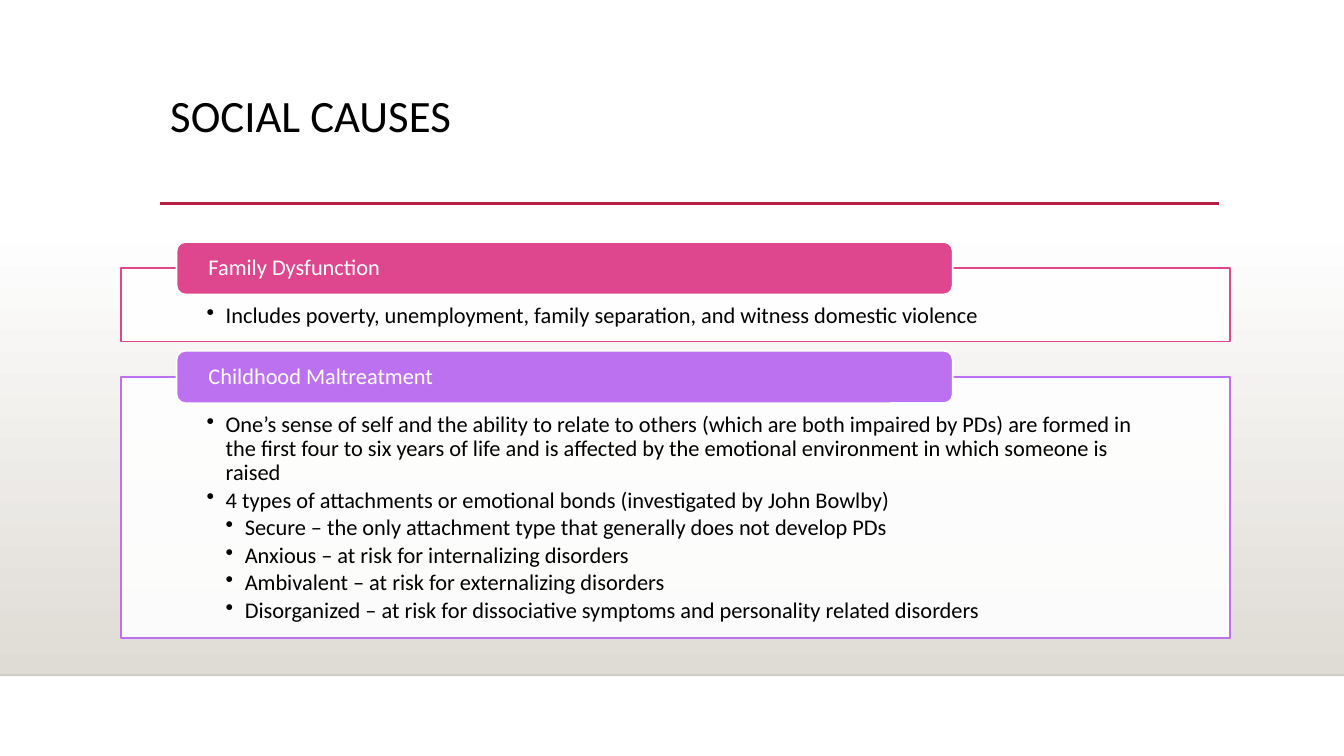
from lxml.etree import SubElement
from pptx import Presentation
from pptx.dml.color import RGBColor
from pptx.enum.shapes import MSO_CONNECTOR, MSO_SHAPE
from pptx.enum.text import MSO_ANCHOR, PP_ALIGN
from pptx.oxml.ns import qn
from pptx.util import Cm, Pt

BLACK = RGBColor(0, 0, 0)
WHITE = RGBColor(0xFF, 0xFF, 0xFF)
CRIMSON = RGBColor(0xB7, 0x1E, 0x42)
PINK = RGBColor(0xDE, 0x47, 0x8E)
PURPLE = RGBColor(0xBC, 0x72, 0xF0)
STONE = RGBColor(0xDF, 0xDB, 0xD5)

SLIDE_WIDTH, SLIDE_HEIGHT = 33.87, 19.05
FLOOR_TOP, FLOOR_BOTTOM = 5.61, 17.02
PANEL_LEFT, PANEL_WIDTH, PANEL_GAP = 3.05, 27.94, 0.89
HEADER_LEFT, HEADER_WIDTH, HEADER_HEIGHT = 4.45, 19.56, 1.32
BULLET_INDENT = 0.48

# Heading, colour, panel height, and (level, text) items
PANELS = [
    ("Family Dysfunction", PINK, 1.85, [
        (1, "Includes poverty, unemployment, family separation, and witness domestic violence"),
    ]),
    ("Childhood Maltreatment", PURPLE, 6.58, [
        (1, "One’s sense of self and the ability to relate to others (which are both impaired "
            "by PDs) are formed in the first four to six years of life and is affected by the "
            "emotional environment in which someone is raised"),
        (1, "4 types of attachments or emotional bonds (investigated by John Bowlby)"),
        (2, "Secure – the only attachment type that generally does not develop PDs"),
        (2, "Anxious – at risk for internalizing disorders"),
        (2, "Ambivalent – at risk for externalizing disorders"),
        (2, "Disorganized – at risk for dissociative symptoms and personality related disorders"),
    ]),
]


def set_alpha(color_parent, percent):
    """Make the solid colour inside an element partly transparent."""
    color = color_parent.find(".//" + qn("a:srgbClr"))
    SubElement(color, qn("a:alpha"), val=str(percent * 1000))


def write_text(paragraph, text, *, size=16, color=BLACK, level=0, space_after=0):
    """Fill a paragraph; a level above zero makes it a bullet."""
    if level:
        properties = paragraph._p.get_or_add_pPr()
        properties.set("marL", str(Cm(BULLET_INDENT * level)))
        properties.set("indent", str(-Cm(BULLET_INDENT)))
        SubElement(properties, qn("a:buChar"), char="•")
    paragraph.alignment = PP_ALIGN.LEFT
    paragraph.line_spacing = 0.9
    paragraph.space_after = Pt(space_after)
    run = paragraph.add_run()
    run.text = text
    run.font.name = "Calibri"
    run.font.size = Pt(size)
    run.font.color.rgb = color


class SlideBuilder:
    def __init__(self, slide):
        self.slide = slide

    def frame(self, shape, anchor, margins):
        frame = shape.text_frame
        frame.word_wrap = True
        frame.vertical_anchor = anchor
        (frame.margin_left, frame.margin_top,
         frame.margin_right, frame.margin_bottom) = map(Cm, margins)
        return frame

    def box(self, kind, left, top, width, height, line_color=None):
        shape = self.slide.shapes.add_shape(kind, Cm(left), Cm(top), Cm(width), Cm(height))
        shape.shadow.inherit = False
        if line_color is None:
            shape.line.fill.background()
        else:
            shape.line.color.rgb = line_color
            shape.line.width = Pt(1.25)
        return shape

    def floor(self):
        shape = self.box(MSO_SHAPE.RECTANGLE, 0, FLOOR_TOP, SLIDE_WIDTH, FLOOR_BOTTOM - FLOOR_TOP)
        shape.fill.gradient()
        shape.fill.gradient_angle = 270
        for stop, position, color in zip(shape.fill.gradient_stops, (0, 1), (WHITE, STONE)):
            stop.position = position
            stop.color.rgb = color

    def rule(self, left, right, y, color, width, alpha=100):
        line = self.slide.shapes.add_connector(
            MSO_CONNECTOR.STRAIGHT, Cm(left), Cm(y), Cm(right), Cm(y))
        line.line.color.rgb = color
        line.line.width = Pt(width)
        properties = line._element.spPr
        if alpha < 100:
            set_alpha(properties, alpha)
        SubElement(properties, qn("a:effectLst"))

    def title(self, text):
        box = self.slide.shapes.add_textbox(Cm(4.04), Cm(2.24), Cm(26.67), Cm(2.92))
        frame = self.frame(box, MSO_ANCHOR.TOP, (0.25, 0.13, 0.25, 0.13))
        write_text(frame.paragraphs[0], text, size=32)

    def panel(self, top, height, color, items):
        shape = self.box(MSO_SHAPE.RECTANGLE, PANEL_LEFT, top, PANEL_WIDTH, height, color)
        shape.fill.solid()
        shape.fill.fore_color.rgb = WHITE
        set_alpha(shape._element.spPr.find(qn("a:solidFill")), 90)
        frame = self.frame(shape, MSO_ANCHOR.TOP, (2.16, 0.91, 2.16, 0.3))
        for index, (level, text) in enumerate(items):
            paragraph = frame.add_paragraph() if index else frame.paragraphs[0]
            write_text(paragraph, text, level=level, space_after=2.4)

    def header(self, panel_top, color, text):
        shape = self.box(MSO_SHAPE.ROUNDED_RECTANGLE, HEADER_LEFT, panel_top - HEADER_HEIGHT / 2,
                         HEADER_WIDTH, HEADER_HEIGHT, WHITE)
        shape.fill.solid()
        shape.fill.fore_color.rgb = color
        frame = self.frame(shape, MSO_ANCHOR.MIDDLE, (0.74, 0, 0.74, 0))
        write_text(frame.paragraphs[0], text, color=WHITE)


def main():
    presentation = Presentation()
    presentation.slide_width = Cm(SLIDE_WIDTH)
    presentation.slide_height = Cm(SLIDE_HEIGHT)
    builder = SlideBuilder(presentation.slides.add_slide(presentation.slide_layouts[6]))

    # Backdrop and title
    builder.floor()
    builder.rule(0, SLIDE_WIDTH, FLOOR_BOTTOM, BLACK, 1, alpha=20)
    builder.rule(4.04, 30.73, 5.13, CRIMSON, 2.5)
    builder.title("SOCIAL CAUSES")

    # Stacked panels, each with a header across its top edge
    top = 6.76
    for heading, color, height, items in PANELS:
        builder.panel(top, height, color, items)
        builder.header(top, color, heading)
        top += height + PANEL_GAP

    presentation.save("out.pptx")


if __name__ == "__main__":
    main()
